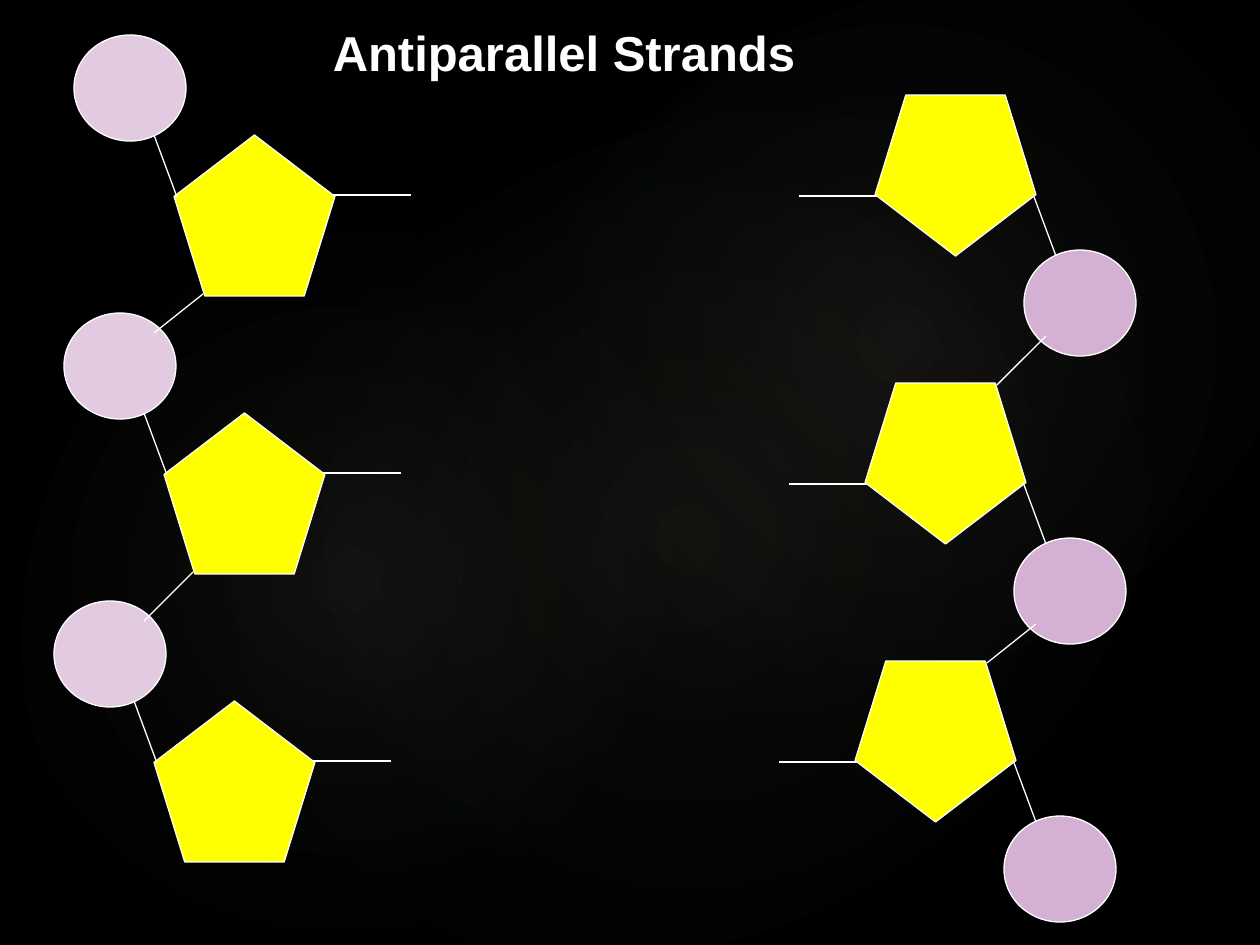
from dataclasses import dataclass

from lxml import etree
from pptx import Presentation, util as u
from pptx.dml.color import RGBColor
from pptx.enum import shapes, text
from pptx.oxml import parse_xml
from pptx.oxml.ns import nsdecls, qn

PX = 914400 // 126


@dataclass(frozen=True)
class Theme:
    background: str = "000000"
    white: str = "FFFFFF"
    sugar: str = "FFFF00"
    left_phosphate: str = "E2CAE1"
    right_phosphate: str = "D4B0D2"
    glow_inner: str = "CBBBA1"
    glow_outer: str = "5B6973"
    font: str = "Arial"
    title_size: int = 28
    line_width: float = 0.75


THEME = Theme()
TITLE = ("Antiparallel Strands", (318, 16, 492, 72))
# box, rotation, opacity of the centre in percent
GLOWS = [
    ((189, 144, 998, 786), 328.7, 7),
    ((-38, 271, 764, 617), 294.3, 8),
    ((451, 16, 893, 655), 328.7, 8),
]
SUGARS = [(174, 135), (164, 413), (154, 701)]  # left strand, top to bottom
SUGAR_SIZE = (161, 161)
PHOSPHATE_SIZE = (112, 106)
# offsets from the top left corner of a sugar
PHOSPHATE_AT = (-100, -100)
BOND = ((-20, 0), (3, 62))
BASE = ((159, 60), (237, 60))
LINK_START = (-10, -80)
LINK_END = (29, 159)  # measured from the sugar above
TURN = (1190, 957)  # x and y sums of a point and its half-turn partner


def rgb(value):
    return RGBColor.from_string(value)


def add(point, offset):
    return point[0] + offset[0], point[1] + offset[1]


def turned(point):
    return TURN[0] - point[0], TURN[1] - point[1]


def add_box(slide, kind, box):
    s = slide.shapes.add_shape(kind, *(v * PX for v in box))
    s.shadow.inherit = False
    return s


def add_glow(slide, box, rotation, opacity):
    s = add_box(slide, shapes.MSO_SHAPE.OVAL, box)
    s.rotation = rotation
    s.line.fill.background()
    s.fill.background()
    no_fill = s._element.spPr.find(qn("a:noFill"))
    gradient = parse_xml(
        f'<a:gradFill {nsdecls("a")} rotWithShape="1"><a:gsLst>'
        f'<a:gs pos="0"><a:srgbClr val="{THEME.glow_inner}">'
        f'<a:alpha val="{opacity * 1000}"/></a:srgbClr></a:gs>'
        f'<a:gs pos="58000"><a:srgbClr val="{THEME.glow_outer}">'
        '<a:alpha val="0"/></a:srgbClr></a:gs></a:gsLst>'
        '<a:path path="circle">'
        '<a:fillToRect l="50000" t="50000" r="50000" b="50000"/>'
        '</a:path></a:gradFill>'
    )
    s._element.spPr.replace(no_fill, gradient)


def outline(line):
    line.color.rgb = rgb(THEME.white)
    line.width = u.Pt(THEME.line_width)


def add_part(slide, kind, corner, size, color, flipped):
    if flipped:
        corner = turned(add(corner, size))
    s = add_box(slide, kind, (*corner, *size))
    s.rotation = 180 if flipped else 0
    s.fill.solid()
    s.fill.fore_color.rgb = rgb(color)
    outline(s.line)


def add_line(slide, start, end, flipped):
    if flipped:
        start, end = turned(start), turned(end)
    c = slide.shapes.add_connector(
        shapes.MSO_CONNECTOR.STRAIGHT, *(v * PX for v in (*start, *end)))
    outline(c.line)
    etree.SubElement(c._element.spPr, qn("a:effectLst"))


def add_strand(slide, phosphate_color, flipped):
    """Draw the left strand, or its half-turn partner on the right."""
    above = None
    for sugar in SUGARS:
        add_part(slide, shapes.MSO_SHAPE.REGULAR_PENTAGON, sugar, SUGAR_SIZE,
                 THEME.sugar, flipped)
        add_part(slide, shapes.MSO_SHAPE.OVAL, add(sugar, PHOSPHATE_AT),
                 PHOSPHATE_SIZE, phosphate_color, flipped)
        for start, end in (BOND, BASE):
            add_line(slide, add(sugar, start), add(sugar, end), flipped)
        if above:
            add_line(slide, add(sugar, LINK_START), add(above, LINK_END), flipped)
        above = sugar


def add_title(slide, words, box):
    tf = slide.shapes.add_textbox(*(v * PX for v in box)).text_frame
    tf.text = words
    tf.word_wrap = False
    tf.auto_size = text.MSO_AUTO_SIZE.SHAPE_TO_FIT_TEXT
    p = tf.paragraphs[0]
    p.alignment = text.PP_ALIGN.CENTER
    font = p.runs[0].font
    font.name = THEME.font
    font.size = u.Pt(THEME.title_size)
    font.bold = True
    font.color.rgb = rgb(THEME.white)


def main():
    prs = Presentation()
    prs.slide_width, prs.slide_height = u.Inches(10), u.Inches(7.5)
    slide = prs.slides.add_slide(prs.slide_layouts[6])
    slide.background.fill.solid()
    slide.background.fill.fore_color.rgb = rgb(THEME.background)
    for glow in GLOWS:
        add_glow(slide, *glow)
    add_strand(slide, THEME.left_phosphate, flipped=False)
    add_strand(slide, THEME.right_phosphate, flipped=True)
    add_title(slide, *TITLE)
    prs.save("out.pptx")


if __name__ == "__main__":
    main()
